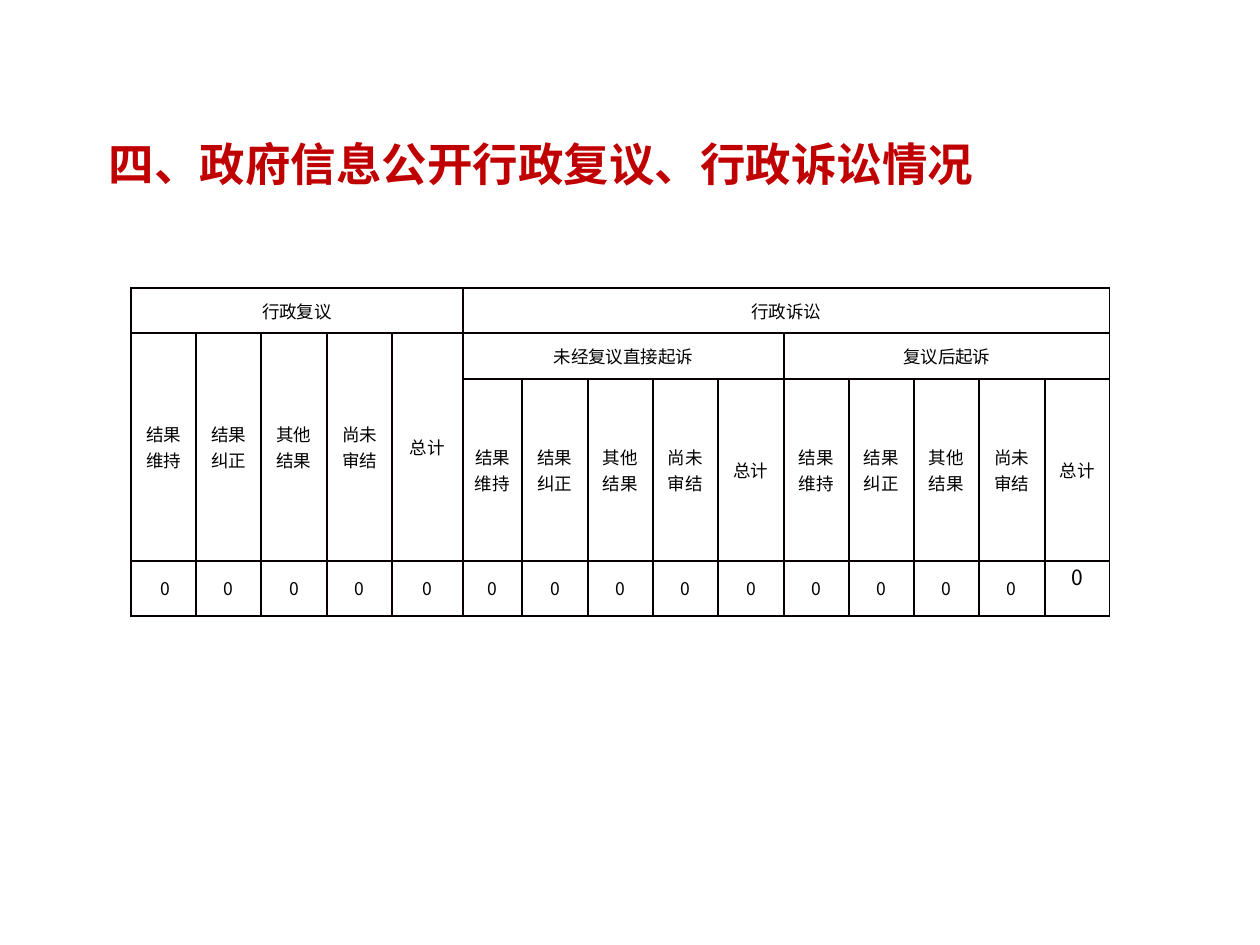
from lxml import etree
from pptx import Presentation
from pptx import util as u
from pptx.dml.color import RGBColor
from pptx.enum import text
from pptx.oxml import ns

SCALE = 914400 / 126
FONT = "Noto Sans CJK SC"
COLORS = {"title": "C00000", "ink": "000000", "border": "080000"}
COLUMNS = [65, 65, 66, 65, 71, 59, 66, 65, 65, 66, 65, 65, 65, 66, 65]
ROWS = [45, 46, 182, 55]
OUTCOMES = ["结果维持", "结果纠正", "其他结果", "尚未审结", "总计"]
SPANS = [
    (0, 0, 0, 4, "行政复议"),
    (0, 5, 0, 14, "行政诉讼"),
    (1, 5, 1, 9, "未经复议直接起诉"),
    (1, 10, 1, 14, "复议后起诉"),
]


def px(value):
    return u.Emu(round(value * SCALE))


def set_values(target, values):
    for name, value in values.items():
        setattr(target, name, value)


def write(frame, words, size, color, bold, para_format):
    para = frame.paragraphs[0]
    set_values(para, para_format)
    span = para.add_run()
    span.text = words
    set_values(span.font, {"name": FONT, "size": u.Pt(size), "bold": bold})
    span.font.color.rgb = RGBColor.from_string(COLORS[color])
    east_asian = etree.SubElement(span.font._element, ns.qn("a:ea"))
    east_asian.set("typeface", FONT)


def add_borders(cell):
    properties = cell._tc.get_or_add_tcPr()
    for side in ("lnL", "lnR", "lnT", "lnB"):
        line = etree.SubElement(properties, ns.qn(f"a:{side}"), w=str(u.Pt(1)))
        fill = etree.SubElement(line, ns.qn("a:solidFill"))
        etree.SubElement(fill, ns.qn("a:srgbClr"), val=COLORS["border"])


def place_title(page, left, top, width, height):
    box = page.shapes.title
    set_values(box, {"left": px(left), "top": px(top),
                     "width": px(width), "height": px(height)})
    set_values(box.text_frame, {"vertical_anchor": text.MSO_ANCHOR.MIDDLE,
                                "auto_size": text.MSO_AUTO_SIZE.NONE,
                                "word_wrap": True})
    write(box.text_frame, "四、政府信息公开行政复议、行政诉讼情况", 26, "title", True,
          {"alignment": text.PP_ALIGN.LEFT, "line_spacing": 0.9})


def fill_cell(cell, words, size=10):
    write(cell.text_frame, words, size, "ink", False,
          {"alignment": text.PP_ALIGN.CENTER})


def place_case_table(page, left, top):
    frame = page.shapes.add_table(len(ROWS), len(COLUMNS), px(left), px(top),
                                  px(sum(COLUMNS)), px(sum(ROWS)))
    table = frame.table
    set_values(table, {"first_row": False, "horz_banding": False})
    for column, width in zip(table.columns, COLUMNS):
        column.width = px(width)
    for row, height in zip(table.rows, ROWS):
        row.height = px(height)
    for cell in table.iter_cells():
        set_values(cell, {"margin_left": px(9), "margin_right": px(9),
                          "margin_top": 0, "margin_bottom": 0,
                          "vertical_anchor": text.MSO_ANCHOR.MIDDLE})
        add_borders(cell)
        cell.fill.background()

    for first_row, first, last_row, last, words in SPANS:
        table.cell(first_row, first).merge(table.cell(last_row, last))
        fill_cell(table.cell(first_row, first), words)

    final = len(COLUMNS) - 1
    for index in range(len(COLUMNS)):
        heading = table.cell(1 if index < len(OUTCOMES) else 2, index)
        if index < len(OUTCOMES):
            heading.merge(table.cell(2, index))
        fill_cell(heading, OUTCOMES[index % len(OUTCOMES)])
        fill_cell(table.cell(3, index), " 0" if index == 0 else "0",
                  12 if index == final else 10)
    table.cell(3, final).vertical_anchor = text.MSO_ANCHOR.TOP


def main():
    deck = Presentation()
    set_values(deck, {"slide_width": px(1260), "slide_height": px(945)})
    page = deck.slides.add_slide(deck.slide_layouts[5])
    place_title(page, 96, 126, 915, 81)
    place_case_table(page, 131, 288)
    deck.save("out.pptx")


if __name__ == "__main__":
    main()
